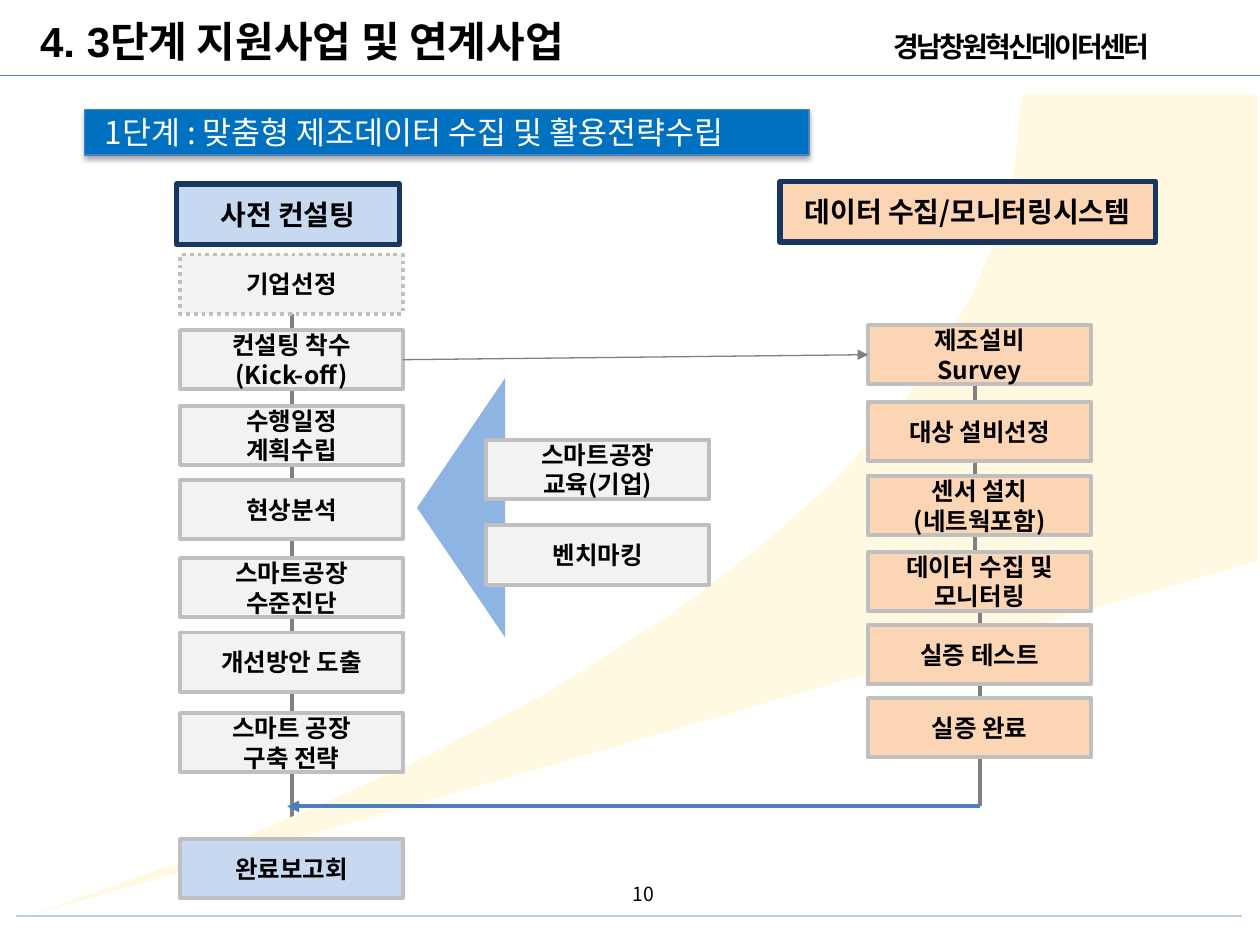
from lxml.etree import SubElement
from pptx import Presentation
from pptx.dml.color import RGBColor
from pptx.enum.dml import MSO_LINE
from pptx.enum.shapes import MSO_CONNECTOR as CONN, MSO_SHAPE as SHAPE
from pptx.enum.text import MSO_ANCHOR as ANCHOR, PP_ALIGN as ALIGN
from pptx.oxml.ns import qn
from pptx.util import Inches, Pt

NOTO = "Noto Sans CJK KR"
GRAY, BLUE, PEACH = "F2F2F2", "C6D9F1", "FCD5B5"
BORDER, NAVY, LINK, ACCENT = "BFBFBF", "17375E", "808080", "4B7EBC"
BOX_W, BOX_H = 1.77, 0.47

# left, top, width, fill, text
HEADINGS = [
    (1.4, 1.46, 1.77, BLUE, "사전 컨설팅"),
    (6.19, 1.44, 2.98, PEACH, "데이터 수집/모니터링시스템"),
]
# left, fill, steps as (top, text)
COLUMNS = {
    "consulting": (1.43, GRAY, [
        (2.02, "기업선정"),
        (2.62, "컨설팅 착수\n(Kick-off)"),
        (3.22, "수행일정\n계획수립"),
        (3.81, "현상분석"),
        (4.43, "스마트공장\n수준진단"),
        (5.02, "개선방안 도출"),
        (5.66, "스마트 공장\n구축 전략"),
        (6.66, "완료보고회"),
    ]),
    "support": (3.86, GRAY, [
        (3.49, "스마트공장\n교육(기업)"),
        (4.17, "벤치마킹"),
    ]),
    "monitoring": (6.89, PEACH, [
        (2.58, "제조설비\nSurvey"),
        (3.19, "대상 설비선정"),
        (3.78, "센서 설치\n(네트웍포함)"),
        (4.38, "데이터 수집 및\n모니터링"),
        (4.96, "실증 테스트"),
        (5.54, "실증 완료"),
    ]),
}
SWOOSH = [
    (8.11, 0.75), (9.99, 0.75), (9.99, 4.45), (0.22, 7.27), (1.05, 6.98),
    (1.73, 6.73), (2.51, 6.4), (3.25, 6.07), (4.34, 5.5), (5.31, 4.89),
    (6.02, 4.35), (6.63, 3.81), (7.12, 3.26), (7.47, 2.76), (7.72, 2.33),
    (7.94, 1.8), (8.05, 1.34),
]

prs = Presentation()
prs.slide_width, prs.slide_height = Inches(10), Inches(7.5)
shapes = prs.slides.add_slide(prs.slide_layouts[6]).shapes


def rgb(color):
    return RGBColor.from_string(color)


def write(sp, text, size, color="000000", bold=False, font=NOTO,
          align=ALIGN.LEFT, anchor=ANCHOR.MIDDLE, insets=(0.1, 0.05), spacing=None):
    tf = sp.text_frame
    tf.text = text
    tf.word_wrap = True
    tf.vertical_anchor = anchor
    tf.margin_left = tf.margin_right = Inches(insets[0])
    tf.margin_top = tf.margin_bottom = Inches(insets[1])
    for p in tf.paragraphs:
        p.alignment = align
        for r in p.runs:
            r.font.size, r.font.bold, r.font.name = Pt(size), bold, font
            r.font.color.rgb = rgb(color)
            rpr = r.font._element
            SubElement(rpr, qn("a:ea")).set("typeface", NOTO)
            if spacing is not None:
                rpr.set("spc", str(int(spacing * 100)))


def text_box(box, text, size, **style):
    write(shapes.add_textbox(*map(Inches, box)), text, size, **style)


def paint(sp, fill, line=None, width=0):
    sp.shadow.inherit = False
    sp.fill.solid()
    sp.fill.fore_color.rgb = rgb(fill)
    if line:
        sp.line.color.rgb = rgb(line)
        sp.line.width = Pt(width)
    else:
        sp.line.fill.background()
    return sp


def add_preset(kind, box, *colors):
    return paint(shapes.add_shape(kind, *map(Inches, box)), *colors)


def add_line(start, end, color, width, arrow=None, kind=CONN.STRAIGHT):
    """Draw a connector; arrow is headEnd (at start) or tailEnd (at end)."""
    c = shapes.add_connector(kind, *map(Inches, start + end))
    c.line.color.rgb = rgb(color)
    c.line.width = Pt(width)
    if arrow:
        SubElement(c.line._get_or_add_ln(), qn("a:" + arrow)).set("type", "triangle")
    SubElement(c._element.spPr, qn("a:effectLst"))
    return c


def add_column(name):
    left, fill, steps = COLUMNS[name]
    boxes = []
    for top, text in steps:
        sp = add_preset(SHAPE.RECTANGLE, (left, top, BOX_W, BOX_H), fill, BORDER, 2.25)
        write(sp, text, 14, bold=True, align=ALIGN.CENTER, insets=(0, 0))
        boxes.append(sp)
    return boxes


# Page frame
add_line((0, 0.6), (10, 0.6), ACCENT, 0.75)
add_line((0.13, 7.27), (9.86, 7.27), "B9CDE5", 1)
text_box((6.99, 0.2, 2.9, 0.33), "경남창원혁신데이터센터", 16, bold=True, spacing=-1.5)

# Vertical links and background
consulting_link = add_line((2.32, 6.66), (2.32, 2.49), LINK, 2.25, "headEnd")
builder = shapes.build_freeform(*map(Inches, SWOOSH[0]), scale=1.0)
builder.add_line_segments([tuple(map(Inches, pt)) for pt in SWOOSH[1:]], close=True)
paint(builder.convert_to_shape(), "FFF9E1")
monitoring_link = add_line((6.07, 4.73), (9.45, 4.69), LINK, 2.25, kind=CONN.ELBOW)
monitoring_link._element.spPr.find(qn("a:xfrm")).set("rot", str(270 * 60000))

# Titles
text_box((0.22, 0.07, 5.41, 0.5), "4. 3단계 지원사업 및 연계사업", 24, bold=True, font="Arial")
text_box((4.75, 7, 0.71, 0.16), "10", 11.1, align=ALIGN.CENTER,
         anchor=ANCHOR.TOP, insets=(0.1, 0))
banner = add_preset(SHAPE.RECTANGLE, (0.67, 0.87, 5.75, 0.36), "0070C0", "4F81BD", 0.75)
write(banner, "1단계 : 맞춤형 제조데이터 수집 및 활용전략수립", 18, "FFFFFF", insets=(0.16, 0.05))
shadow = SubElement(banner._element.spPr.find(qn("a:effectLst")), qn("a:outerShdw"),
                    blurRad=str(Pt(3.1)), dist=str(Pt(1.8)), dir=str(90 * 60000), rotWithShape="0")
shadow_color = SubElement(shadow, qn("a:srgbClr"), val="000000")
SubElement(shadow_color, qn("a:alpha"), val="35000")
for left, top, width, fill, text in HEADINGS:
    sp = add_preset(SHAPE.RECTANGLE, (left, top, width, 0.48), fill, NAVY, 3)
    write(sp, text, 16, bold=True, align=ALIGN.CENTER, insets=(0, 0))

# Process columns
consulting = add_column("consulting")
selection, kickoff, report = consulting[0], consulting[1], consulting[-1]
selection.line.dash_style = MSO_LINE.ROUND_DOT
report.fill.fore_color.rgb = rgb(BLUE)
add_preset(SHAPE.ISOSCELES_TRIANGLE, (2.63, 3.68, 2.06, 0.7), "8EB4E3").rotation = 270
add_column("support")
survey = add_column("monitoring")[0]

# Joins between the columns
consulting_link.begin_connect(report, 0)
consulting_link.end_connect(selection, 2)
survey_link = add_line((3.2, 2.86), (6.89, 2.81), LINK, 0.75, "tailEnd")
survey_link.begin_connect(kickoff, 3)
survey_link.end_connect(survey, 1)
add_line((7.78, 6.4), (2.28, 6.4), ACCENT, 2.25, "tailEnd")

prs.save("out.pptx")
